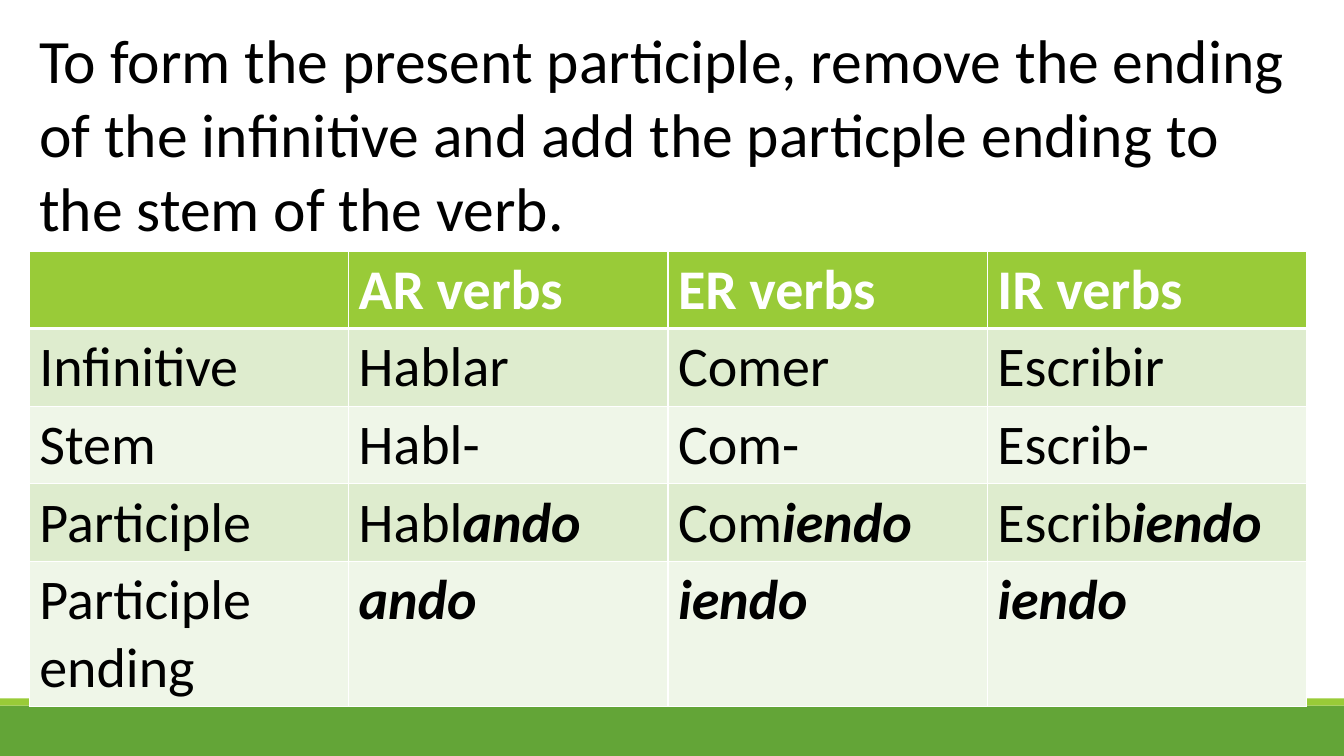
from pptx import Presentation
from pptx.dml.color import RGBColor
from pptx.enum.shapes import MSO_SHAPE
from pptx.oxml import parse_xml
from pptx.oxml.ns import nsdecls
from pptx.util import Inches, Pt

GREEN, LIME = "63A537", "99CB38"
BAND_FILLS = ["DEECCE", "EFF6E8"]
WHITE, BLACK = "FFFFFF", "000000"
ROW_HEIGHTS = [0.77, 0.77, 0.77, 0.77, 1.44]
VERB_ROWS = [
    [("", ""), ("AR verbs", ""), ("ER verbs", ""), ("IR verbs", "")],
    [("Infinitive", ""), ("Hablar", ""), ("Comer", ""), ("Escribir", "")],
    [("Stem", ""), ("Habl-", ""), ("Com-", ""), ("Escrib-", "")],
    [("Participle", ""), ("Habl", "ando"), ("Com", "iendo"), ("Escrib", "iendo")],
    [("Participle ending", ""), ("", "ando"), ("", "iendo"), ("", "iendo")],
]


def color(value):
    return RGBColor.from_string(value)


def add_text(paragraph, text, size=40, fill=BLACK, bold=False, italic=False):
    run = paragraph.add_run()
    run.text = text
    run.font.name = "Calibri"
    run.font.size = Pt(size)
    run.font.color.rgb = color(fill)
    run.font.bold = bold
    run.font.italic = italic


class SlideBuilder:
    def __init__(self, presentation):
        self.slide = presentation.slides.add_slide(presentation.slide_layouts[6])

    def bar(self, top, height, fill):
        shape = self.slide.shapes.add_shape(
            MSO_SHAPE.RECTANGLE, 0, Inches(top), Inches(13.33), Inches(height))
        shape.shadow.inherit = False
        shape.fill.solid()
        shape.fill.fore_color.rgb = color(fill)
        shape.line.fill.background()

    def text_box(self, left, top, width, height, text, **style):
        shape = self.slide.shapes.add_textbox(
            Inches(left), Inches(top), Inches(width), Inches(height))
        shape.text_frame.word_wrap = True
        add_text(shape.text_frame.paragraphs[0], text, **style)

    def border(self, cell, side, width):
        line = parse_xml(
            f'<a:{side} {nsdecls("a")} w="{Pt(width)}"><a:solidFill>'
            f'<a:srgbClr val="{WHITE}"/></a:solidFill></a:{side}>')
        properties = cell.fill._xPr
        position = len(properties.findall(line.tag[:line.tag.index("}") + 1] + "*")) - 1
        properties.insert(position, line)

    def table(self, left, top, width, rows, heights):
        table = self.slide.shapes.add_table(
            len(rows), len(rows[0]), Inches(left), Inches(top),
            Inches(width), Inches(sum(heights))).table
        for row_index, row in enumerate(rows):
            table.rows[row_index].height = Inches(heights[row_index])
            is_header = row_index == 0
            for column_index, (stem, ending) in enumerate(row):
                cell = table.cell(row_index, column_index)
                cell.fill.solid()
                cell.fill.fore_color.rgb = color(
                    LIME if is_header else BAND_FILLS[(row_index - 1) % 2])
                for side in ("lnL", "lnR", "lnT", "lnB"):
                    thick = (is_header and side == "lnB") or (row_index == 1 and side == "lnT")
                    self.border(cell, side, 3 if thick else 1)
                paragraph = cell.text_frame.paragraphs[0]
                if stem:
                    add_text(paragraph, stem, fill=WHITE if is_header else BLACK, bold=is_header)
                if ending:
                    add_text(paragraph, ending, bold=True, italic=True)


def main():
    presentation = Presentation()
    presentation.slide_width = Inches(13.33)
    presentation.slide_height = Inches(7.5)
    builder = SlideBuilder(presentation)
    builder.bar(7, 0.5, GREEN)
    builder.bar(6.93, 0.07, LIME)
    builder.text_box(
        0.29, 0.17, 12.82, 2.32,
        "To form the present participle, remove the ending of the infinitive "
        "and add the particple ending to the stem of the verb.", size=44)
    builder.table(0.29, 2.49, 12.67, VERB_ROWS, ROW_HEIGHTS)
    presentation.save("out.pptx")


if __name__ == "__main__":
    main()
